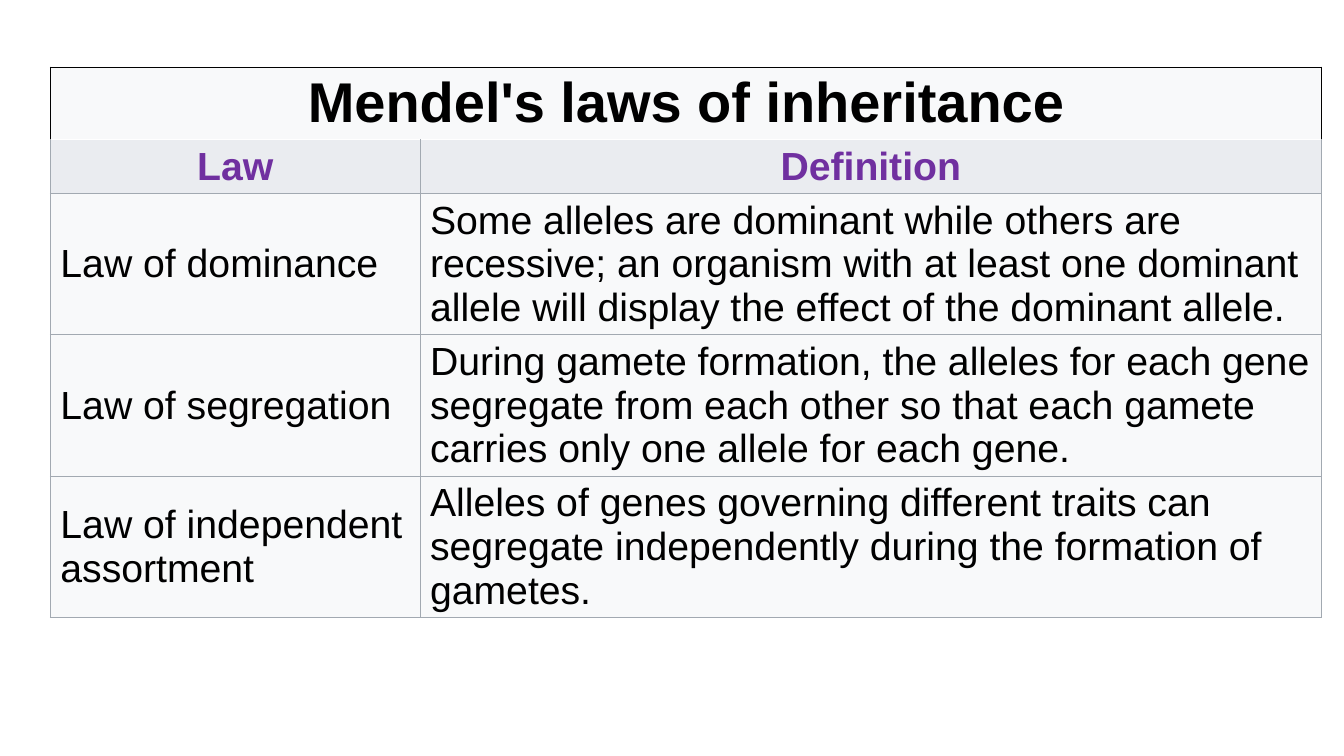
import pptx
import pptx.util
import pptx.dml.color
import pptx.enum.text
import pptx.oxml.ns
import lxml.etree

Pt = pptx.util.Pt
qn = pptx.oxml.ns.qn
CENTER = pptx.enum.text.PP_ALIGN.CENTER
LEFT = pptx.enum.text.PP_ALIGN.LEFT
MIDDLE = pptx.enum.text.MSO_ANCHOR.MIDDLE

# Content
TITLE = "Mendel's laws of inheritance"
HEADINGS = ("Law", "Definition")
LAWS = [
    ("Law of dominance",
     "Some alleles are dominant while others are recessive; an organism with at least "
     "one dominant allele will display the effect of the dominant allele."),
    ("Law of segregation",
     "During gamete formation, the alleles for each gene segregate from each other so "
     "that each gamete carries only one allele for each gene."),
    ("Law of independent assortment",
     "Alleles of genes governing different traits can segregate independently during "
     "the formation of gametes."),
]

# Look and layout
COLORS = {"text": "000000", "heading": "7030A0", "body": "F8F9FA",
          "band": "EAECF0", "rule": "A2A9B1"}
TITLE_STYLE = dict(size=40, bold=True, color="text", fill="body", align=CENTER,
                   space=0, border="text", border_width=1)
HEADING_STYLE = dict(TITLE_STYLE, size=28, color="heading", fill="band",
                     border="rule", border_width=0.75)
LAW_STYLE = dict(HEADING_STYLE, bold=False, color="text", fill="body",
                 align=LEFT, space=6)
LEFT_EDGE, TOP_EDGE = 36, 48
COLUMN_WIDTHS = (264, 644)
ROW_HEIGHTS = [51.8, 38.5] + [100.8] * len(LAWS)


def rgb(name):
    return pptx.dml.color.RGBColor.from_string(COLORS[name])


def set_borders(cell, color, width, sides):
    properties = cell._tc.get_or_add_tcPr()
    for position, side in enumerate(sides):
        line = lxml.etree.Element(qn(f"a:ln{side}"), w=str(int(Pt(width))))
        fill = lxml.etree.SubElement(line, qn("a:solidFill"))
        lxml.etree.SubElement(fill, qn("a:srgbClr"), val=COLORS[color])
        properties.insert(position, line)


def fill_cell(cell, text, style, sides="LRTB"):
    cell.vertical_anchor = MIDDLE
    cell.fill.solid()
    cell.fill.fore_color.rgb = rgb(style["fill"])
    cell.text_frame.text = text
    paragraph = cell.text_frame.paragraphs[0]
    paragraph.alignment = style["align"]
    paragraph.space_before = paragraph.space_after = Pt(style["space"])
    font = paragraph.runs[0].font
    font.name, font.size, font.bold = "Arial", Pt(style["size"]), style["bold"]
    font.color.rgb = rgb(style["color"])
    set_borders(cell, style["border"], style["border_width"], sides)


deck = pptx.Presentation()
deck.slide_width, deck.slide_height = Pt(960), Pt(540)
slide = deck.slides.add_slide(deck.slide_layouts[6])

# Table grid
laws_table = slide.shapes.add_table(
    len(ROW_HEIGHTS), len(COLUMN_WIDTHS), Pt(LEFT_EDGE), Pt(TOP_EDGE),
    Pt(sum(COLUMN_WIDTHS)), Pt(sum(ROW_HEIGHTS))).table
laws_table.first_row = laws_table.horz_banding = False
for column, width in zip(laws_table.columns, COLUMN_WIDTHS):
    column.width = Pt(width)
for row, height in zip(laws_table.rows, ROW_HEIGHTS):
    row.height = Pt(height)

# Title row across both columns
title_cell = laws_table.cell(0, 0)
title_cell.merge(laws_table.cell(0, 1))
fill_cell(title_cell, TITLE, TITLE_STYLE)

# Headings, which leave their top edge to the title row, then the laws
for row_index, texts in enumerate([HEADINGS] + LAWS, start=1):
    is_heading = row_index == 1
    for column_index, text in enumerate(texts):
        fill_cell(laws_table.cell(row_index, column_index), text,
                  HEADING_STYLE if is_heading else LAW_STYLE,
                  "LRB" if is_heading else "LRTB")

deck.save("out.pptx")
